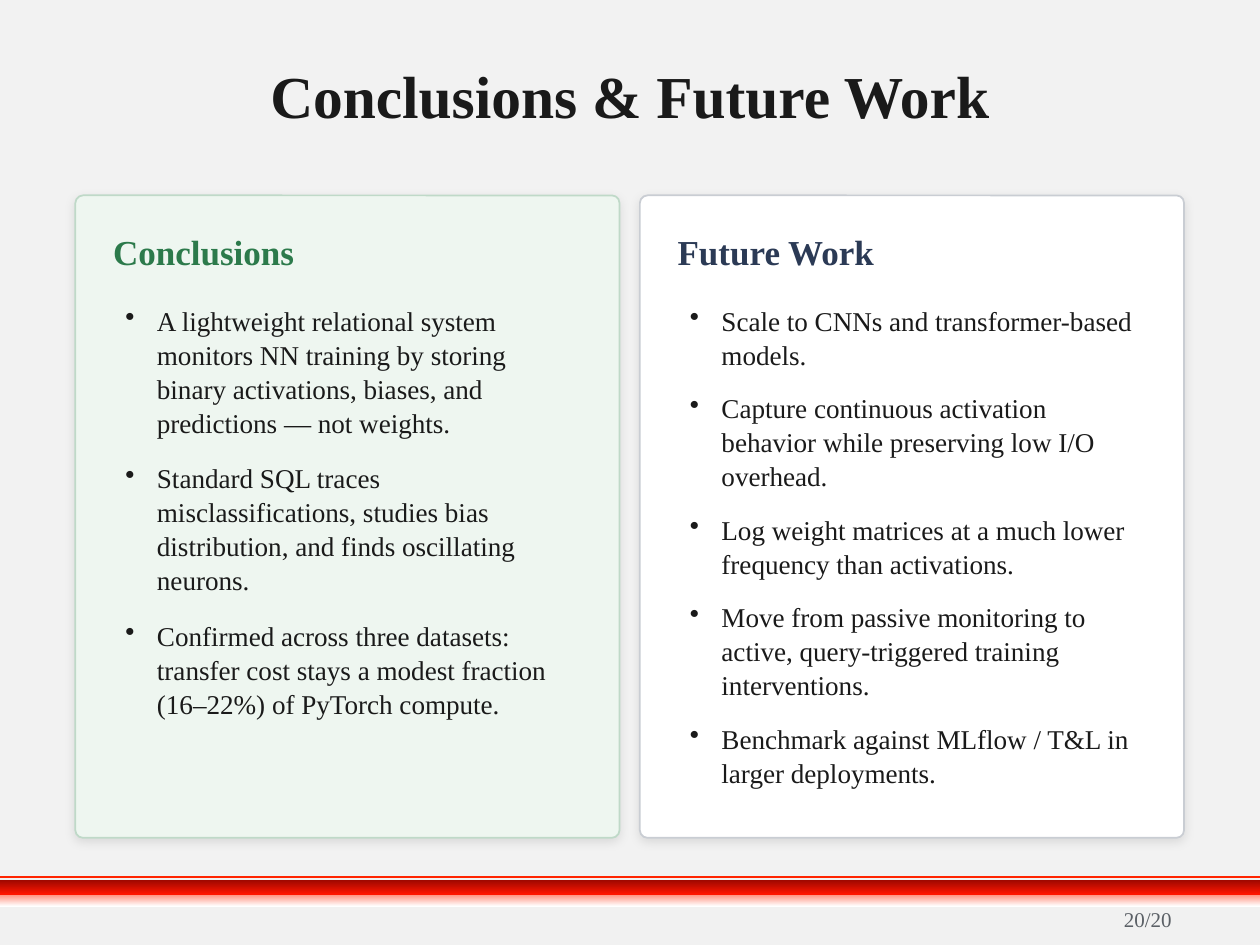
import pptx
import pptx.dml.color
import pptx.enum.shapes
import pptx.enum.text
import pptx.oxml
import pptx.oxml.ns
import pptx.util
from lxml import etree

Cm, Pt = pptx.util.Cm, pptx.util.Pt
SHAPE = pptx.enum.shapes.MSO_SHAPE
ALIGN = pptx.enum.text.PP_ALIGN
MIDDLE = pptx.enum.text.MSO_ANCHOR.MIDDLE
qn = pptx.oxml.ns.qn

# Content
TITLE = "Conclusions & Future Work"
PAGE_NUMBER = "20/20"
CARDS = [
    {"heading": "Conclusions", "accent": "2C7A4B", "fill": "EEF6F0",
     "border": "BFD9C8", "gap": 12, "points": [
         "A lightweight relational system monitors NN training by storing "
         "binary activations, biases, and predictions — not weights.",
         "Standard SQL traces misclassifications, studies bias "
         "distribution, and finds oscillating neurons.",
         "Confirmed across three datasets: transfer cost stays a modest "
         "fraction (16–22%) of PyTorch compute."]},
    {"heading": "Future Work", "accent": "2B3A55", "fill": "FFFFFF",
     "border": "C9CDD3", "gap": 11, "points": [
         "Scale to CNNs and transformer-based models.",
         "Capture continuous activation behavior while preserving low I/O "
         "overhead.",
         "Log weight matrices at a much lower frequency than activations.",
         "Move from passive monitoring to active, query-triggered training "
         "interventions.",
         "Benchmark against MLflow / T&L in larger deployments."]},
]

# Formats
INK = "1A1A1A"
TITLE_FONT = {"size": Pt(34), "bold": True}
HEADING_FONT = {"size": Pt(20), "bold": True}
BODY_FONT = {"size": Pt(15.5)}
NUMBER_FONT = {"size": Pt(12)}

# Layout in centimetres
WIDTH, HEIGHT = 25.4, 19.05
CARD_LEFT, CARD_TOP, CARD_WIDTH, CARD_HEIGHT = 1.52, 3.94, 10.97, 12.95
CARD_GAP, PADDING = 0.41, 0.76
RULE_TOP = 17.68
BANDS = [(17.81, 0.46, "FF2400", "FFFFFF"), (17.75, 0.28, "A00800", "FF1600")]


def color(value):
    return pptx.dml.color.RGBColor.from_string(value)


def add_box(shapes, kind, left, top, width, height):
    shape = shapes.add_shape(kind, Cm(left), Cm(top), Cm(width), Cm(height))
    shape.shadow.inherit = False
    shape.line.fill.background()
    return shape


def add_soft_shadow(shape):
    effects = shape._element.spPr.find(qn("a:effectLst"))
    shadow = etree.SubElement(
        effects, qn("a:outerShdw"), blurRad=str(Pt(6)), dist=str(Pt(2)),
        dir="5400000", algn="t", rotWithShape="0")
    black = etree.SubElement(shadow, qn("a:srgbClr"), val="000000")
    etree.SubElement(black, qn("a:alpha"), val="10000")


def add_bullet(paragraph):
    properties = paragraph._p.get_or_add_pPr()
    properties.set("marL", str(Cm(0.635)))
    properties.set("indent", str(-Cm(0.635)))
    etree.SubElement(properties, qn("a:buChar"), char="•")


def add_text(shapes, place, lines, font, ink, inset=None, anchor=None,
             bullets=False, **layout):
    box = shapes.add_textbox(*(Cm(length) for length in place))
    frame = box.text_frame
    frame.word_wrap = True
    if anchor is not None:
        frame.vertical_anchor = anchor
    if inset is not None:
        for side in ("left", "top", "right", "bottom"):
            setattr(frame, f"margin_{side}", Cm(inset))
    for index, line in enumerate(lines):
        paragraph = frame.add_paragraph() if index else frame.paragraphs[0]
        if bullets:
            add_bullet(paragraph)
        for name, value in layout.items():
            setattr(paragraph, name, value)
        run = paragraph.add_run()
        run.text = line
        run.font.name = "Times New Roman"
        run.font.color.rgb = color(ink)
        for name, value in font.items():
            setattr(run.font, name, value)


def add_backdrop(slide):
    slide.background.fill.solid()
    slide.background.fill.fore_color.rgb = color("F1F1F1")
    panel = add_box(slide.shapes, SHAPE.RECTANGLE, 0, 0, WIDTH, RULE_TOP)
    panel.fill.solid()
    panel.fill.fore_color.rgb = color("F2F2F2")
    # Red rule and gradient bands above the footer
    rule = slide.shapes.add_connector(
        pptx.enum.shapes.MSO_CONNECTOR.STRAIGHT,
        Cm(0), Cm(RULE_TOP), Cm(WIDTH), Cm(RULE_TOP))
    rule.line.color.rgb = color("FF2400")
    rule.line.width = Pt(0.75)
    etree.SubElement(rule._element.spPr, qn("a:effectLst"))
    for top, height, *stops in BANDS:
        band = add_box(slide.shapes, SHAPE.RECTANGLE, 0, top, WIDTH, height)
        band.fill.gradient()
        band.fill.gradient_angle = 270
        for stop, value in zip(band.fill.gradient_stops, stops):
            stop.color.rgb = color(value)


def add_card(shapes, left, card):
    shape = add_box(shapes, SHAPE.ROUNDED_RECTANGLE,
                    left, CARD_TOP, CARD_WIDTH, CARD_HEIGHT)
    shape.adjustments[0] = 0.014
    shape.fill.solid()
    shape.fill.fore_color.rgb = color(card["fill"])
    shape.line.color.rgb = color(card["border"])
    shape.line.width = Pt(1)
    add_soft_shadow(shape)
    text_left, text_width = left + PADDING, CARD_WIDTH - 2 * PADDING
    add_text(shapes, (text_left, CARD_TOP + 0.56, text_width, 1.14),
             [card["heading"]], HEADING_FONT, card["accent"],
             inset=0, anchor=MIDDLE)
    add_text(shapes, (text_left, CARD_TOP + 2.03, text_width, 10.41),
             card["points"], BODY_FONT, INK, bullets=True,
             space_after=Pt(card["gap"]), line_spacing=1.05)


def main():
    presentation = pptx.Presentation()
    presentation.slide_width, presentation.slide_height = Cm(WIDTH), Cm(HEIGHT)
    slide = presentation.slides.add_slide(presentation.slide_layouts[6])
    add_backdrop(slide)
    add_text(slide.shapes, (1.02, 0.71, WIDTH - 2.04, 2.41), [TITLE],
             TITLE_FONT, INK, inset=0, anchor=MIDDLE, alignment=ALIGN.CENTER)
    for index, card in enumerate(CARDS):
        left = CARD_LEFT + index * (CARD_WIDTH + CARD_GAP)
        add_card(slide.shapes, left, card)
    add_text(slide.shapes, (21.84, 18.14, 2.03, 0.76), [PAGE_NUMBER],
             NUMBER_FONT, "5B6066", anchor=MIDDLE, alignment=ALIGN.RIGHT)
    presentation.save("out.pptx")


if __name__ == "__main__":
    main()
